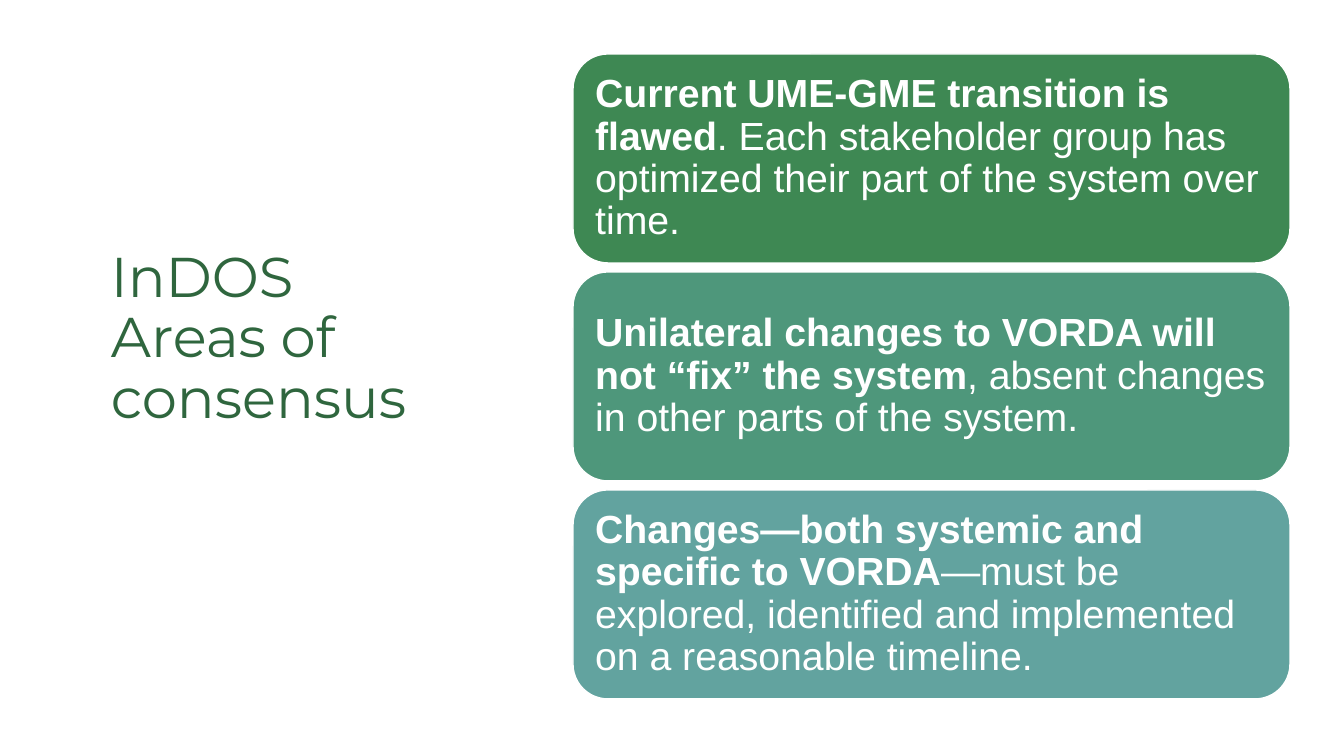
from dataclasses import dataclass

from pptx import Presentation, util as u
from pptx.dml.color import RGBColor
from pptx.enum import shapes, text

PX = u.Inches(1) / 100.8

WHITE = RGBColor(0xFF, 0xFF, 0xFF)
FOREST = RGBColor(0x2F, 0x66, 0x3E)
GREEN = RGBColor(0x3E, 0x88, 0x53)
JADE = RGBColor(0x4E, 0x97, 0x7B)
TEAL = RGBColor(0x62, 0xA3, 0x9F)

LEFT, TOP, WIDE, HIGH, STEP = 573, 54, 717, 209, 218


@dataclass
class Card:
    lead: str
    rest: str
    fill: RGBColor


CARDS = [
    Card("Current UME-GME transition is flawed",
         ". Each stakeholder group has optimized their part of the system over time.",
         GREEN),
    Card("Unilateral changes to VORDA will not “fix” the system",
         ", absent changes in other parts of the system.",
         JADE),
    Card("Changes—both systemic and specific to VORDA",
         "—must be explored, identified and implemented on a reasonable timeline.",
         TEAL),
]


def px(n: int) -> u.Emu:
    return u.Emu(round(n * PX))


def write(shape, lead: str, rest: str = "", *, font: str, size: int,
          color: RGBColor, bold: bool = False, side: int = 10, edge: int = 5) -> None:
    """Fill a shape with a lead run and an optional plain run."""
    frame = shape.text_frame
    frame.word_wrap = True
    frame.vertical_anchor = text.MSO_ANCHOR.MIDDLE
    frame.margin_left = frame.margin_right = px(side)
    frame.margin_top = frame.margin_bottom = px(edge)
    para = frame.paragraphs[0]
    para.text = lead
    para.alignment = text.PP_ALIGN.LEFT
    para.line_spacing = 0.9
    if rest:
        para.add_run().text = rest
    for i, run in enumerate(para.runs):
        run.font.name = font
        run.font.size = u.Pt(size)
        run.font.color.rgb = color
        run.font.bold = bold and i == 0


def draw(slide, card: Card, row: int) -> None:
    box = slide.shapes.add_shape(
        shapes.MSO_SHAPE.ROUNDED_RECTANGLE,
        px(LEFT), px(TOP + row * STEP), px(WIDE), px(HIGH))
    box.shadow.inherit = False
    box.fill.solid()
    box.fill.fore_color.rgb = card.fill
    box.line.color.rgb = WHITE
    box.line.width = u.Pt(1)
    write(box, card.lead, card.rest, font="Arial", size=28, color=WHITE,
          bold=True, side=12, edge=12)


def main() -> None:
    deck = Presentation()
    deck.slide_width, deck.slide_height = px(1344), px(756)
    slide = deck.slides.add_slide(deck.slide_layouts[6])

    # Heading
    head = slide.shapes.add_textbox(px(101), px(197), px(377), px(285))
    write(head, "InDOS\vAreas of consensus", font="Montserrat", size=40, color=FOREST)

    # Stacked cards
    for row, card in enumerate(CARDS):
        draw(slide, card, row)

    deck.save("out.pptx")


if __name__ == "__main__":
    main()
